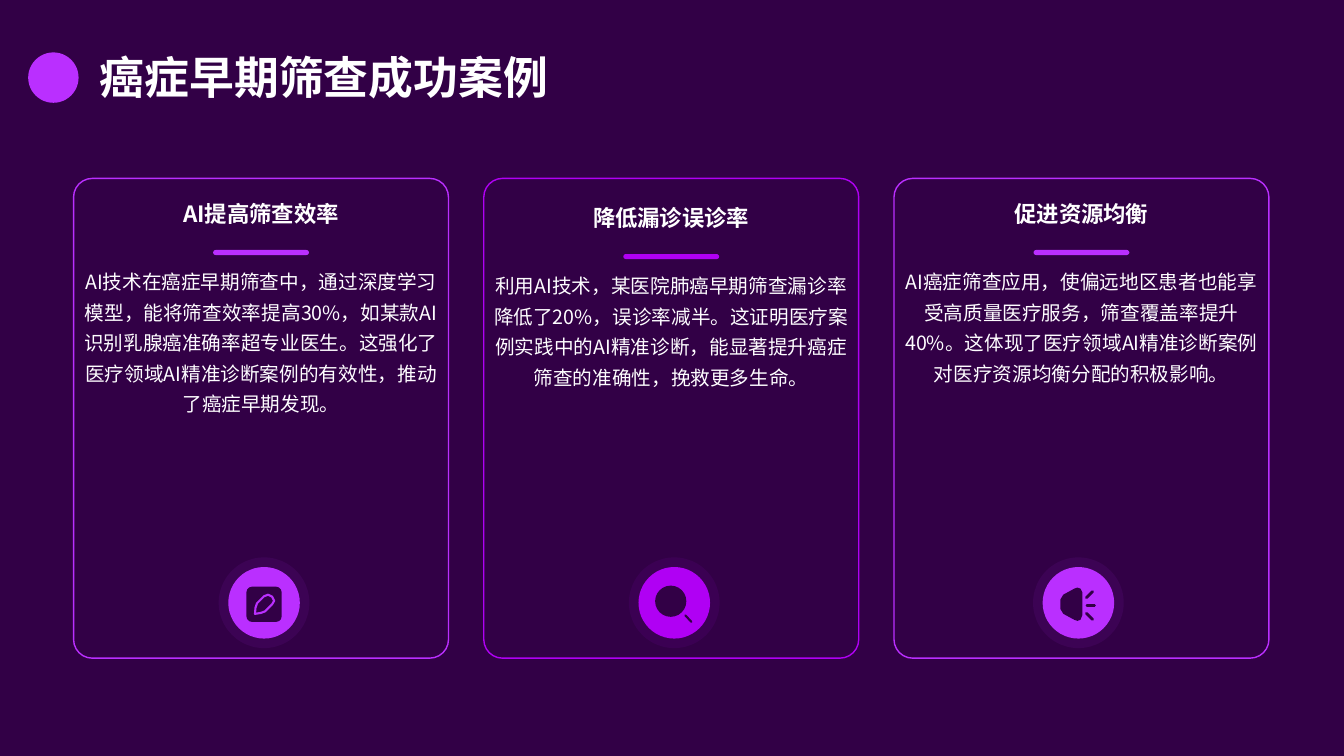
"""Build a slide with three cards on early cancer screening."""
import dataclasses

import lxml.etree
import pptx
import pptx.dml.color
import pptx.enum.shapes
import pptx.enum.text
import pptx.oxml.ns
import pptx.util

KIND = pptx.enum.shapes.MSO_SHAPE
ALIGN = pptx.enum.text.PP_ALIGN
ANCHOR = pptx.enum.text.MSO_ANCHOR
SCALE = 4572


@dataclasses.dataclass(frozen=True)
class Theme:
    """Hold the colours, font and type sizes of the slide."""
    back: str = "320046"
    violet: str = "BA2FFF"
    purple: str = "B000F4"
    white: str = "FFFFFF"
    pale: str = "FEFDFF"
    font: str = "Noto Sans CJK SC"
    title: int = 32
    head: int = 16
    body: int = 14


@dataclasses.dataclass(frozen=True)
class Card:
    """Hold what differs from card to card."""
    head: str
    body: str
    tint: str
    icon: str
    drop: int
    shift: int


THEME = Theme()
CARDS = [
    Card("AI提高筛查效率",
         "AI技术在癌症早期筛查中，通过深度学习模型，能将筛查效率提高30%，如某款AI识别乳腺癌准确率超专业医生。"
         "这强化了医疗领域AI精准诊断案例的有效性，推动了癌症早期发现。",
         THEME.violet, "pen", 0, 6),
    Card("降低漏诊误诊率",
         "利用AI技术，某医院肺癌早期筛查漏诊率降低了20%，误诊率减半。"
         "这证明医疗案例实践中的AI精准诊断，能显著提升癌症筛查的准确性，挽救更多生命。",
         THEME.purple, "lens", 8, 6),
    Card("促进资源均衡",
         "AI癌症筛查应用，使偏远地区患者也能享受高质量医疗服务，筛查覆盖率提升40%。"
         "这体现了医疗领域AI精准诊断案例对医疗资源均衡分配的积极影响。",
         THEME.violet, "horn", 0, -6),
]
LEFT, TOP, WIDE, HIGH, STEP = 146, 354, 744, 952, 814
PEN = [(-18, 22), (-17, 10), (-14, 1), (0, -13), (8, -16),
       (16, -12), (20, -4), (16, 3), (2, 17), (-6, 20)]
HORN = [(-36, -6), (-30, -16), (-8, -28), (-2, -30), (4, -28), (8, -20),
        (8, 24), (4, 34), (-2, 36), (-8, 34), (-30, 22), (-36, 12)]
RAYS = [(16, -10, 28, -22), (17, 5, 32, 5), (16, 21, 28, 33)]


def px(*nums):
    """Turn px into EMU."""
    return [num * SCALE for num in nums]


def rgb(code):
    """Read a colour code."""
    return pptx.dml.color.RGBColor.from_string(code)


def paint(shape, fill=None, line=None, width=1):
    """Set the fill and line of a shape and drop its shadow."""
    shape.shadow.inherit = False
    if fill:
        shape.fill.solid()
        shape.fill.fore_color.rgb = rgb(fill)
    else:
        shape.fill.background()
    if line:
        shape.line.color.rgb = rgb(line)
        shape.line.width = pptx.util.Pt(width)
    else:
        shape.line.fill.background()


def block(slide, kind, box, round_by=None, **look):
    """Add a preset shape."""
    shape = slide.shapes.add_shape(kind, *px(*box))
    if round_by is not None:
        shape.adjustments[0] = round_by
    paint(shape, **look)
    return shape


def disc(slide, x, y, size, fill):
    """Add a circle about a centre."""
    half = size // 2
    return block(slide, KIND.OVAL, (x - half, y - half, size, size), fill=fill)


def fade(shape, share):
    """Set the opacity of a solid fill in percent."""
    color = shape.fill._xPr.find(".//" + pptx.oxml.ns.qn("a:srgbClr"))
    alpha = lxml.etree.SubElement(color, pptx.oxml.ns.qn("a:alpha"))
    alpha.set("val", str(share * 1000))


def outline(slide, x, y, spots, **look):
    """Add a closed freeform from points about a centre."""
    spots = [(x + dx, y + dy) for dx, dy in spots]
    pen = slide.shapes.build_freeform(*spots[0], scale=SCALE)
    pen.add_line_segments(spots[1:], close=True)
    paint(pen.convert_to_shape(), **look)


def stroke(slide, x, y, ends, width):
    """Add a dark round-ended line about a centre."""
    x1, y1, x2, y2 = ends
    line = slide.shapes.add_connector(
        pptx.enum.shapes.MSO_CONNECTOR.STRAIGHT,
        *px(x + x1, y + y1, x + x2, y + y2))
    line.line.color.rgb = rgb(THEME.back)
    line.line.width = pptx.util.Pt(width)
    line.line._get_or_add_ln().set("cap", "rnd")
    lxml.etree.SubElement(line._element.spPr, pptx.oxml.ns.qn("a:effectLst"))


def write(shape, text, size, color, bold=False, align=ALIGN.CENTER, space=1.0):
    """Fill a shape with one formatted paragraph."""
    frame = shape.text_frame
    frame.word_wrap = True
    frame.auto_size = pptx.enum.text.MSO_AUTO_SIZE.NONE
    frame.text = text
    para = frame.paragraphs[0]
    para.alignment = align
    para.line_spacing = space
    run = para.runs[0]
    run.font.size = pptx.util.Pt(size)
    run.font.bold = bold
    run.font.color.rgb = rgb(color)
    run.font.name = THEME.font
    east = lxml.etree.SubElement(run._r.get_or_add_rPr(),
                                 pptx.oxml.ns.qn("a:ea"))
    east.set("typeface", THEME.font)
    return para


def label(slide, box, anchor, *args, **look):
    """Add a text box without insets."""
    shape = slide.shapes.add_textbox(*px(*box))
    frame = shape.text_frame
    frame.margin_left = frame.margin_right = 0
    frame.margin_top = frame.margin_bottom = 0
    frame.vertical_anchor = anchor
    return write(shape, *args, **look)


def icon(slide, x, y, card):
    """Draw the round badge of a card with its sign."""
    fade(disc(slide, x, y, 180, card.tint), 8)
    disc(slide, x, y, 142, card.tint)
    if card.icon == "pen":
        block(slide, KIND.ROUNDED_RECTANGLE, (x - 35, y - 32, 70, 70), 0.16,
              fill=THEME.back)
        outline(slide, x, y, PEN, fill=THEME.back, line=card.tint, width=1.5)
    elif card.icon == "lens":
        disc(slide, x - 7, y - 3, 62, THEME.back)
        stroke(slide, x, y, (22, 25, 34, 38), 1.5)
    else:
        outline(slide, x, y, HORN, fill=THEME.back)
        for ray in RAYS:
            stroke(slide, x, y, ray, 2)


def panel(slide, left, card):
    """Draw one card with head, bar, body and badge."""
    mid = left + WIDE // 2
    block(slide, KIND.ROUNDED_RECTANGLE, (left, TOP, WIDE, HIGH), 0.05,
          line=card.tint)
    label(slide, (left + 19, 364 + card.drop, 706, 118), ANCHOR.MIDDLE,
          card.head, THEME.head, THEME.white, bold=True)
    block(slide, KIND.ROUNDED_RECTANGLE, (mid - 95, 496 + card.drop, 190, 10),
          0.5, fill=card.tint)
    para = label(slide, (left + 19, 522 + card.drop, 706, 672), ANCHOR.TOP,
                 card.body, THEME.body, THEME.pale, space=1.3)
    para.space_before = para.space_after = pptx.util.Pt(3)
    icon(slide, mid + card.shift, 1196, card)


def head(slide, text):
    """Place the title and the dot beside it."""
    disc(slide, 106, 154, 100, THEME.violet)
    title = slide.shapes.title
    title.left, title.top, title.width, title.height = px(178, 62, 2418, 158)
    title.text_frame.vertical_anchor = ANCHOR.MIDDLE
    write(title, text, THEME.title, THEME.white, bold=True,
          align=ALIGN.LEFT, space=1.2)


def main():
    """Build and save the deck."""
    deck = pptx.Presentation()
    deck.slide_width, deck.slide_height = px(2667, 1500)
    slide = deck.slides.add_slide(deck.slide_layouts[5])
    slide.background.fill.solid()
    slide.background.fill.fore_color.rgb = rgb(THEME.back)
    head(slide, "癌症早期筛查成功案例")
    for num, card in enumerate(CARDS):
        panel(slide, LEFT + num * STEP, card)
    deck.save("out.pptx")


if __name__ == "__main__":
    main()
